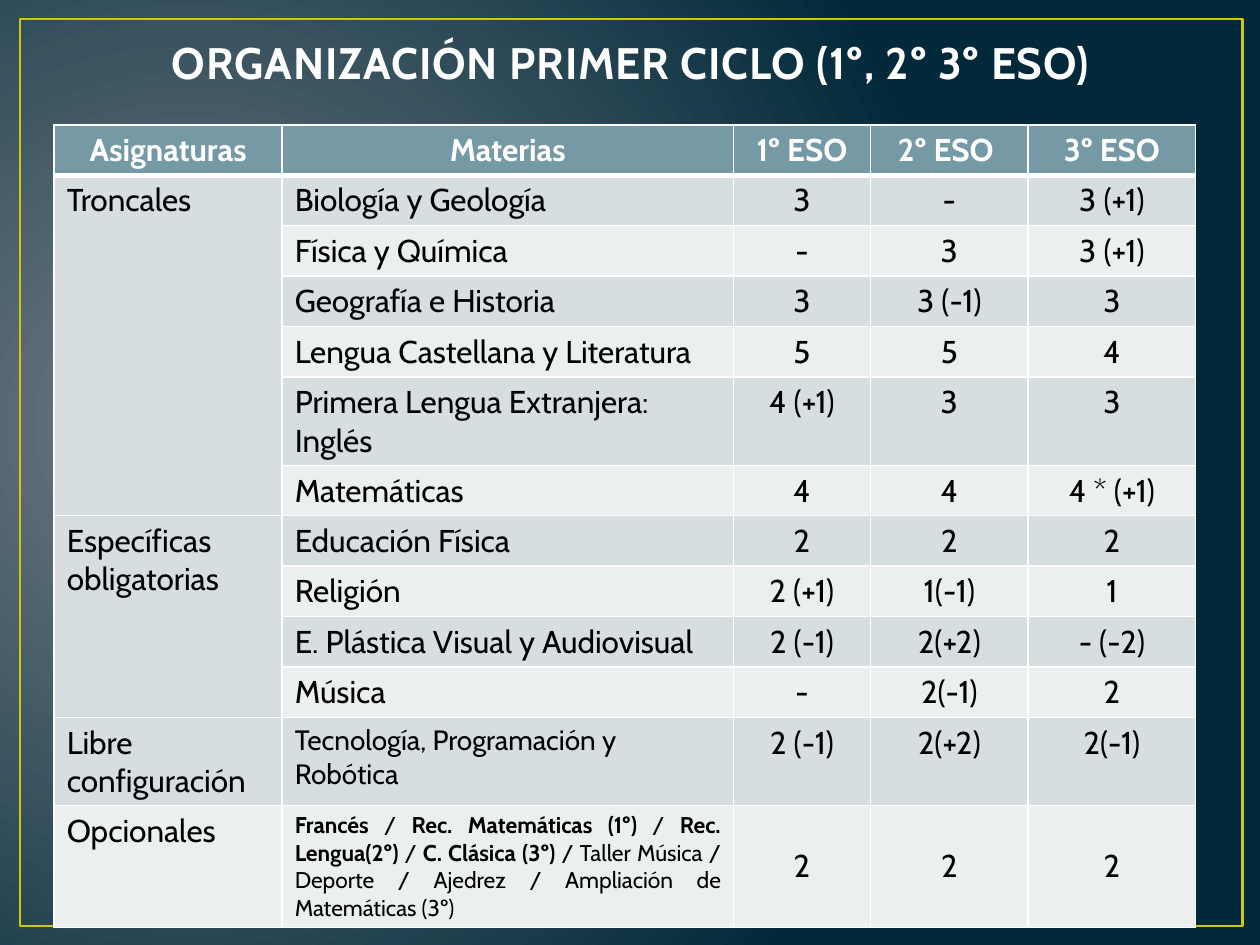
"""Build the slide with the weekly hours of each subject in the first ESO cycle."""
from lxml.etree import SubElement as Sub
from pptx import Presentation
from pptx.dml.color import RGBColor
from pptx.enum.shapes import MSO_SHAPE as Shape
from pptx.enum.text import MSO_ANCHOR as Anchor, PP_ALIGN as Align
from pptx.oxml import parse_xml
from pptx.oxml.ns import nsdecls, qn
from pptx.util import Inches, Pt

WHITE = RGBColor(0xFF, 0xFF, 0xFF)
CREAM = RGBColor(0xFE, 0xFE, 0xFE)
BLACK = RGBColor(0, 0, 0)
GOLD = RGBColor(0xCF, 0xC6, 0x0D)
GREY = RGBColor(0x71, 0x7C, 0x84)
NAVY = RGBColor(0x01, 0x29, 0x3A)
SLATE = RGBColor(0x38, 0x4F, 0x55)
TEAL = RGBColor(0x75, 0x9A, 0xA5)
DARK = RGBColor(0xD6, 0xDE, 0xE1)
LIGHT = RGBColor(0xEC, 0xEF, 0xF0)
FONT = "Cabin"

WIDTHS = [1.81, 3.58, 1.09, 1.25, 1.33]
HEIGHTS = [0.37] * 11 + [0.65, 0.93]
OPTIONS = (
    "**Francés** / **Rec. Matemáticas (1º) **/ **Rec. Lengua(2º)** / **C. Clásica (3º) **"
    "/ Taller Música / Deporte / Ajedrez / Ampliación de Matemáticas (3º) "
)
ROWS = [
    ["Asignaturas", "Materias", "1º ESO", "2º ESO ", "3º ESO"],
    ["Troncales", "Biología y Geología", "3", "-", "3 (+1)"],
    ["", "Física y Química", "-", "3", "3 (+1)"],
    ["", "Geografía e Historia", "3", "3 (-1)", "3"],
    ["", "Lengua Castellana y Literatura", "5", "5", "4"],
    ["", "Primera Lengua Extranjera: Inglés", "4 (+1)", "3", "3"],
    ["", "Matemáticas", "4", "4", "4 * (+1)"],
    ["Específicas obligatorias", "Educación Física", "2", "2", "2"],
    ["", "Religión", "2 (+1)", "1(-1)", "1"],
    ["", "E. Plástica Visual y Audiovisual", "2 (-1)", "2(+2)", "- (-2)"],
    ["", "Música", "-", "2(-1)", "2"],
    ["Libre configuración", "Tecnología, Programación y Robótica", "2 (-1)", "2(+2)", "2(-1)"],
    ["Opcionales", OPTIONS, "2", "2", "2"],
]
SIZES = {(11, 1): 16, (12, 1): 13}
LAST = len(ROWS) - 1


def add_line(parent, tag, width, color):
    line = Sub(parent, qn(tag), w=str(Pt(width)))
    Sub(Sub(line, qn("a:solidFill")), qn("a:srgbClr"), val=str(color))
    return line


def style(run, size, color, bold):
    run.font.name = FONT
    run.font.size = Pt(size)
    run.font.bold = bold
    run.font.color.rgb = color


prs = Presentation()
prs.slide_width, prs.slide_height = Inches(10), Inches(7.5)
slide = prs.slides.add_slide(prs.slide_layouts[6])

back = slide.background.fill
back.gradient()
for stop, color in zip(back.gradient_stops, [GREY, NAVY]):
    stop.color.rgb = color
for lin in slide.element.xpath(".//p:bg//a:lin"):
    lin.getparent().replace(lin, parse_xml(
        f'<a:path {nsdecls("a")} path="circle">'
        '<a:fillToRect l="15000" t="50000" r="85000" b="60000"/></a:path>'
    ))

frame = slide.shapes.add_shape(
    Shape.RECTANGLE, Inches(0.16), Inches(0.15), Inches(9.7), Inches(7.2)
)
frame.shadow.inherit = False
frame.fill.background()
frame.line.color.rgb = GOLD
frame.line.width = Pt(1.5)

title = slide.shapes.add_textbox(Inches(0.51), Inches(0.29), Inches(9), Inches(0.46))
box = title.text_frame
box.word_wrap = True
box.vertical_anchor = Anchor.BOTTOM
box.text = "ORGANIZACIÓN PRIMER CICLO (1º, 2º 3º ESO)"
box.paragraphs[0].alignment = Align.CENTER
run = box.paragraphs[0].runs[0]
style(run, 25.2, CREAM, True)
props = run.font._element
props.set("spc", "50")
props.insert(0, add_line(props, "a:ln", 1.05, SLATE))

table = slide.shapes.add_table(
    len(ROWS), len(WIDTHS), Inches(0.43), Inches(0.99), Inches(sum(WIDTHS)), Inches(sum(HEIGHTS))
).table
for col, width in zip(table.columns, WIDTHS):
    col.width = Inches(width)
for row, height in zip(table.rows, HEIGHTS):
    row.height = Inches(height)

for r, texts in enumerate(ROWS):
    for c, text in enumerate(texts):
        cell = table.cell(r, c)
        tops = {"a:lnL": 1, "a:lnR": 1, "a:lnT": 3 if r == 1 else 1, "a:lnB": 3 if r == 0 else 1}
        for tag, width in tops.items():
            add_line(cell._tc.get_or_add_tcPr(), tag, width, WHITE)
        cell.fill.solid()
        shaded = r % 2 == 1 or (c == 0 and r < LAST)
        cell.fill.fore_color.rgb = TEAL if r == 0 else DARK if shaded else LIGHT
        para = cell.text_frame.paragraphs[0]
        if r == 0 or c > 1:
            para.alignment = Align.CENTER
        elif (r, c) == (LAST, 1):
            para.alignment = Align.JUSTIFY
        if r == LAST and c > 1:
            cell.vertical_anchor = Anchor.MIDDLE
        for i, part in enumerate(text.split("**")):
            if part:
                run = para.add_run()
                run.text = part
                style(run, SIZES.get((r, c), 18), WHITE if r == 0 else BLACK, r == 0 or i % 2 == 1)

for first, last in [(1, 6), (7, 10)]:
    table.cell(first, 0).merge(table.cell(last, 0))

prs.save("out.pptx")
